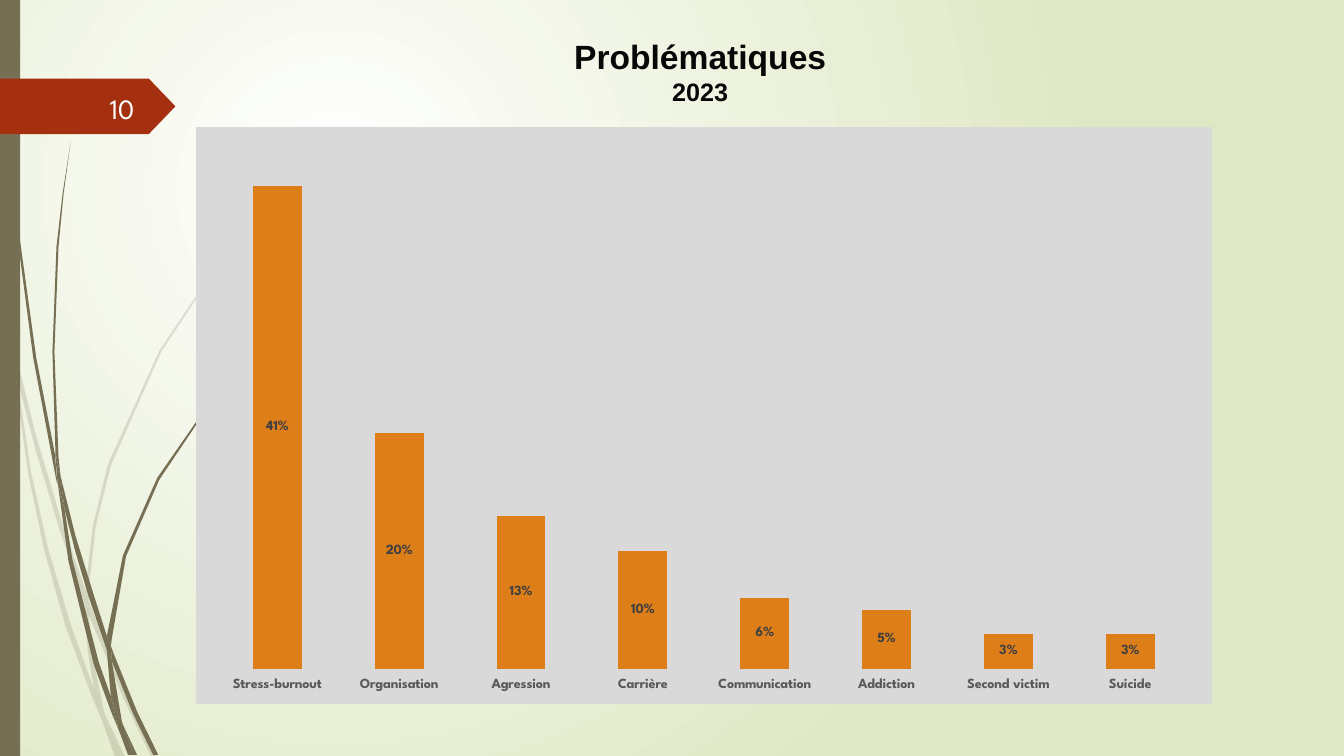
from dataclasses import dataclass

from lxml.etree import SubElement
from pptx import Presentation
from pptx.chart.data import CategoryChartData
from pptx.dml.color import RGBColor
from pptx.enum.chart import XL_CHART_TYPE as ChartType, XL_LABEL_POSITION as LabelPos
from pptx.enum.chart import XL_TICK_MARK as Tick
from pptx.enum.shapes import MSO_SHAPE as Preset
from pptx.enum.text import MSO_ANCHOR as Anchor, MSO_AUTO_SIZE as AutoSize, PP_ALIGN as Align
from pptx.oxml import parse_xml
from pptx.oxml.ns import nsdecls, qn
from pptx.util import Emu, Inches, Pt

# Fine grid of square cells, a hundred to the inch
CELL = Inches(1) // 100
COLUMNS, ROWS = 1333, 750

WHITE = RGBColor(0xFF, 0xFF, 0xFF)
PALE_GREEN = RGBColor(0xDF, 0xE8, 0xC4)
OLIVE = RGBColor(0x76, 0x6F, 0x54)
RUST = RGBColor(0xA5, 0x30, 0x10)
ORANGE = RGBColor(0xDE, 0x7E, 0x18)
LIGHT_GREY = RGBColor(0xD9, 0xD9, 0xD9)
AXIS_GREY = RGBColor(0x59, 0x59, 0x59)
LABEL_GREY = RGBColor(0x40, 0x40, 0x40)
TITLE_BLACK = RGBColor(0x08, 0x08, 0x08)
BLACK = RGBColor(0, 0, 0)
NUMBER_WHITE = RGBColor(0xFE, 0xFF, 0xFF)
HEADING, BODY = "Arial", "League Spartan"

Outline = list[tuple[int, int]]


@dataclass(frozen=True)
class Box:
    col: int
    row: int
    cols: int
    rows: int

    def emu(self) -> list[Emu]:
        return [Emu(v * CELL) for v in (self.col, self.row, self.cols, self.rows)]


@dataclass(frozen=True)
class Grass:
    """Pieces of grass blades sharing one opacity, in percent."""
    opacity: int
    pieces: list[Outline]


@dataclass(frozen=True)
class Problem:
    name: str
    share: float


PALE_GRASS = Grass(20, [
    [(11, 350), (9, 322), (0, 282), (0, 299), (10, 344)],
    [(58, 522), (84, 599), (85, 586), (62, 520), (36, 433), (14, 345), (17, 376), (36, 449)],
    [(92, 607), (88, 596), (88, 610), (123, 694), (150, 751), (155, 751), (127, 692)],
    [(119, 751), (124, 751), (105, 711)],
    [(93, 683), (70, 619), (48, 545), (31, 469), (17, 376), (11, 350), (28, 470), (44, 546),
     (65, 621), (92, 693), (101, 714), (99, 707)],
    [(84, 599), (87, 646), (93, 683), (96, 692), (105, 711), (103, 706), (91, 646), (88, 608)],
    [(88, 584), (95, 522), (110, 462), (160, 349), (229, 245), (268, 198), (290, 175), (312, 154),
     (312, 153), (289, 175), (268, 197), (228, 244), (158, 348), (107, 461), (92, 522), (85, 584),
     (85, 586), (88, 596)],
    [(101, 714), (114, 751), (119, 751)],
    [(88, 608), (88, 610), (88, 596), (85, 586), (84, 599)],
    [(96, 692), (93, 683), (99, 707), (101, 714), (119, 751), (105, 711)],
])
DARK_GRASS = Grass(100, [
    [(7, 110), (17, 233), (33, 355), (56, 477), (57, 481), (55, 457), (55, 453), (36, 355),
     (19, 232), (8, 109), (5, 48), (4, 0), (3, 0), (4, 48)],
    [(88, 592), (106, 645), (106, 631), (93, 590), (75, 532), (60, 472), (64, 505), (75, 548)],
    [(113, 649), (110, 641), (111, 656), (132, 708), (152, 749), (157, 749), (136, 706)],
    [(110, 691), (98, 657), (72, 556), (64, 505), (57, 477), (68, 557), (93, 659), (111, 708),
     (117, 722), (116, 717)],
    [(60, 472), (58, 453), (54, 349), (58, 245), (63, 193), (70, 141), (62, 193), (56, 245),
     (52, 349), (55, 449)],
    [(133, 749), (136, 749), (122, 719)],
    [(57, 477), (64, 505), (60, 472), (55, 449), (55, 453)],
    [(111, 633), (125, 552), (158, 476), (205, 406), (231, 374), (245, 359), (261, 344),
     (260, 344), (245, 358), (231, 373), (204, 405), (156, 474), (122, 551), (106, 631),
     (110, 641)],
    [(117, 722), (127, 749), (131, 749)],
    [(106, 645), (110, 691), (116, 706), (122, 719), (121, 716), (111, 656), (109, 651)],
    [(106, 645), (109, 651), (111, 656), (110, 641), (106, 631)],
    [(116, 706), (110, 691), (116, 717), (117, 722), (130, 749), (133, 749), (122, 719)],
])

PROBLEMS = [
    Problem("Stress-burnout", 0.41), Problem("Organisation", 0.20),
    Problem("Agression", 0.13), Problem("Carrière", 0.10),
    Problem("Communication", 0.06), Problem("Addiction", 0.05),
    Problem("Second victim", 0.03), Problem("Suicide", 0.03),
]


def paint(s, color: RGBColor) -> None:
    s.shadow.inherit = False
    s.fill.solid()
    s.fill.fore_color.rgb = color
    s.line.fill.background()


def style_font(font, name: str, size: float, color: RGBColor, bold: bool = False) -> None:
    font.name, font.size, font.bold = name, Pt(size), bold
    font.color.rgb = color


def draw_grass(slide, grass: Grass) -> None:
    for outline in grass.pieces:
        builder = slide.shapes.build_freeform(*outline[0], scale=CELL)
        builder.add_line_segments(outline[1:], close=True)
        s = builder.convert_to_shape()
        paint(s, OLIVE)
        if grass.opacity < 100:
            color = s.fill._xPr.find(qn("a:solidFill"))[0]
            SubElement(color, qn("a:alpha"), val=str(grass.opacity * 1000))


def draw_preset(slide, kind: Preset, box: Box, color: RGBColor):
    s = slide.shapes.add_shape(kind, *box.emu())
    paint(s, color)
    return s


def set_background(slide) -> None:
    fill = slide.background.fill
    fill.gradient()
    for stop, color, position in zip(fill.gradient_stops, (WHITE, PALE_GREEN), (0, 1)):
        stop.color.rgb, stop.position = color, position
    grad = slide._element.find(".//" + qn("a:gradFill"))
    grad.remove(grad.find(qn("a:lin")))
    ring = SubElement(grad, qn("a:path"), {"path": "circle"})
    SubElement(ring, qn("a:fillToRect"), l="50000", t="50000", r="100000", b="100000")


def write_title(slide, box: Box) -> None:
    s = slide.shapes.title
    s.left, s.top, s.width, s.height = box.emu()
    tf = s.text_frame
    tf.word_wrap, tf.vertical_anchor, tf.auto_size = True, Anchor.TOP, AutoSize.SHAPE_TO_FIT_TEXT
    for i, (text, size) in enumerate([("Problématiques", 24), ("2023", 18)]):
        p = tf.add_paragraph() if i else tf.paragraphs[0]
        p.alignment = Align.CENTER
        r = p.add_run()
        r.text = text
        style_font(r.font, HEADING, size, TITLE_BLACK, True)


def write_number(slide, box: Box) -> None:
    tf = slide.shapes.add_textbox(*box.emu()).text_frame
    tf.word_wrap, tf.vertical_anchor = True, Anchor.MIDDLE
    p = tf.paragraphs[0]
    p.alignment = Align.RIGHT
    r = p.add_run()
    r.text = "10"
    style_font(r.font, BODY, 20, NUMBER_WHITE)


def draw_chart(slide, box: Box) -> None:
    data = CategoryChartData(number_format="0%")
    data.categories = [p.name for p in PROBLEMS]
    data.add_series("Series 1", [p.share for p in PROBLEMS])
    chart = slide.shapes.add_chart(ChartType.COLUMN_STACKED, *box.emu(), data).chart
    chart.has_legend = chart.has_title = False
    style_font(chart.font, BODY, 10, BLACK)
    # Columns and their labels
    plot = chart.plots[0]
    plot.gap_width, plot.overlap, plot.vary_by_categories = 150, 100, False
    plot.series[0].format.fill.solid()
    plot.series[0].format.fill.fore_color.rgb = ORANGE
    labels = plot.series[0].data_labels
    labels.show_value, labels.position = True, LabelPos.CENTER
    labels.number_format, labels.number_format_is_linked = "0%", False
    style_font(labels.font, BODY, 10, LABEL_GREY, True)
    # Axes
    names, shares = chart.category_axis, chart.value_axis
    names.major_tick_mark = Tick.OUTSIDE
    names.format.line.fill.background()
    style_font(names.tick_labels.font, BODY, 10, AXIS_GREY, True)
    shares.visible, shares.minimum_scale, shares.maximum_scale = False, 0, 0.45
    grid = shares.major_gridlines.format.line
    grid.color.rgb, grid.width = LIGHT_GREY, Pt(0.75)
    # Grey panel behind the columns
    solid = f'<a:solidFill><a:srgbClr val="{LIGHT_GREY}"/></a:solidFill>'
    panel = parse_xml(f'<c:spPr {nsdecls("c", "a")}>{solid}<a:ln w="9525">{solid}</a:ln></c:spPr>')
    chart._chartSpace.find(qn("c:chart")).addnext(panel)


prs = Presentation()
prs.slide_width, prs.slide_height = COLUMNS * CELL, ROWS * CELL
slide = prs.slides.add_slide(prs.slide_layouts[5])
set_background(slide)
# Grass, side band and number tag
draw_grass(slide, PALE_GRASS)
draw_grass(slide, DARK_GRASS)
draw_preset(slide, Preset.RECTANGLE, Box(0, 0, 20, ROWS), OLIVE)
draw_preset(slide, Preset.PENTAGON, Box(0, 78, 174, 55), RUST).adjustments[0] = 0.48
# Title, number and chart
write_title(slide, Box(332, 31, 725, 81))
write_number(slide, Box(58, 87, 85, 40))
draw_chart(slide, Box(194, 126, 1008, 572))
prs.save("out.pptx")
